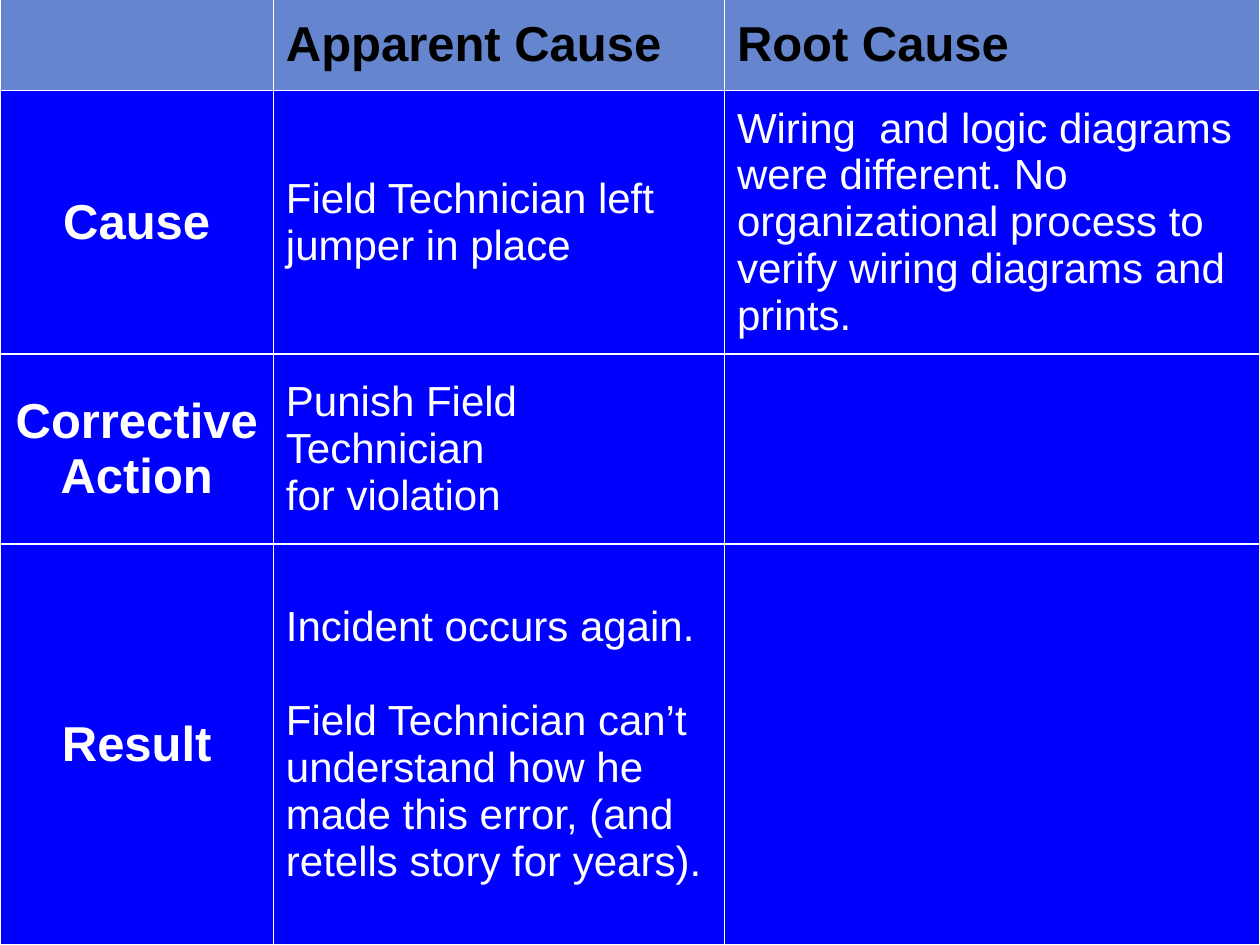
import dataclasses
import typing

import lxml.etree
import pptx
import pptx.dml.color
import pptx.enum.text
import pptx.oxml.ns
import pptx.table
import pptx.util


@dataclasses.dataclass(frozen=True)
class Theme:
    page: str = "0000FF"
    header: str = "6586CE"
    header_text: str = "000000"
    text: str = "FFFFFF"
    border: str = "FFFFFF"
    font: str = "Arial"
    heading_size: int = 28
    body_size: int = 24
    paragraph_gap: int = 27
    border_width: int = 1


@dataclasses.dataclass(frozen=True)
class Comparison:
    label: str
    height_share: float
    apparent: tuple[str, ...] = ()
    root: tuple[str, ...] = ()
    spaced: bool = False


class Style(typing.NamedTuple):
    size: int
    color: str
    fill: str
    bold: bool = False
    centered: bool = False
    spaced: bool = False


THEME = Theme()
WIDTH = pptx.util.Inches(10)
HEIGHT = pptx.util.Inches(7.5)
TOP = pptx.util.Inches(-0.01)
COLUMN_SHARES = (0.217, 0.358, 0.425)
HEADER_SHARE = 0.097
HEADINGS = ("", "Apparent Cause", "Root Cause")
COMPARISONS = (
    Comparison(
        "Cause", 0.279,
        ("Field Technician left  jumper in place",),
        ("Wiring  and logic diagrams were different. No organizational "
         "process to verify wiring diagrams and prints.",),
    ),
    Comparison(
        "Corrective Action", 0.201,
        ("Punish Field Technician", "for violation"),
    ),
    Comparison(
        "Result", 0.424,
        ("Incident occurs again.",
         "Field Technician can’t understand how he made this error, "
         "(and retells story for years)."),
        spaced=True,
    ),
)


def rgb(value: str) -> pptx.dml.color.RGBColor:
    return pptx.dml.color.RGBColor.from_string(value)


def draw_borders(cell: pptx.table._Cell) -> None:
    properties = cell._tc.get_or_add_tcPr()
    qn = pptx.oxml.ns.qn
    for position, side in enumerate(("a:lnL", "a:lnR", "a:lnT", "a:lnB")):
        line = lxml.etree.Element(qn(side), w=str(pptx.util.Pt(THEME.border_width)))
        fill = lxml.etree.SubElement(line, qn("a:solidFill"))
        lxml.etree.SubElement(fill, qn("a:srgbClr"), val=THEME.border)
        properties.insert(position, line)


def fill_cell(cell: pptx.table._Cell, paragraphs: tuple[str, ...], style: Style) -> None:
    cell.fill.solid()
    cell.fill.fore_color.rgb = rgb(style.fill)
    cell.vertical_anchor = pptx.enum.text.MSO_ANCHOR.MIDDLE
    draw_borders(cell)
    for index, wording in enumerate(paragraphs):
        frame = cell.text_frame
        paragraph = frame.add_paragraph() if index else frame.paragraphs[0]
        if style.centered:
            paragraph.alignment = pptx.enum.text.PP_ALIGN.CENTER
        if style.spaced and index:
            paragraph.space_before = pptx.util.Pt(THEME.paragraph_gap)
        run = paragraph.add_run()
        run.text = wording
        run.font.name = THEME.font
        run.font.size = pptx.util.Pt(style.size)
        run.font.bold = style.bold
        run.font.color.rgb = rgb(style.color)


def main() -> None:
    deck = pptx.Presentation()
    deck.slide_width, deck.slide_height = WIDTH, HEIGHT
    slide = deck.slides.add_slide(deck.slide_layouts[6])
    slide.background.fill.solid()
    slide.background.fill.fore_color.rgb = rgb(THEME.page)

    cause_table = slide.shapes.add_table(
        len(COMPARISONS) + 1, len(HEADINGS), 0, TOP, WIDTH, HEIGHT - TOP
    ).table
    for column, share in zip(cause_table.columns, COLUMN_SHARES):
        column.width = round(WIDTH * share)
    row_shares = (HEADER_SHARE, *(item.height_share for item in COMPARISONS))
    for row, share in zip(cause_table.rows, row_shares):
        row.height = round(HEIGHT * share)

    heading = Style(THEME.heading_size, THEME.header_text, THEME.header, bold=True)
    label = Style(THEME.heading_size, THEME.text, THEME.page, bold=True, centered=True)
    for column, wording in enumerate(HEADINGS):
        fill_cell(cause_table.cell(0, column), (wording,) if wording else (), heading)
    for row, item in enumerate(COMPARISONS, start=1):
        body = Style(THEME.body_size, THEME.text, THEME.page, spaced=item.spaced)
        fill_cell(cause_table.cell(row, 0), (item.label,), label)
        fill_cell(cause_table.cell(row, 1), item.apparent, body)
        fill_cell(cause_table.cell(row, 2), item.root, body)

    deck.save("out.pptx")


if __name__ == "__main__":
    main()
